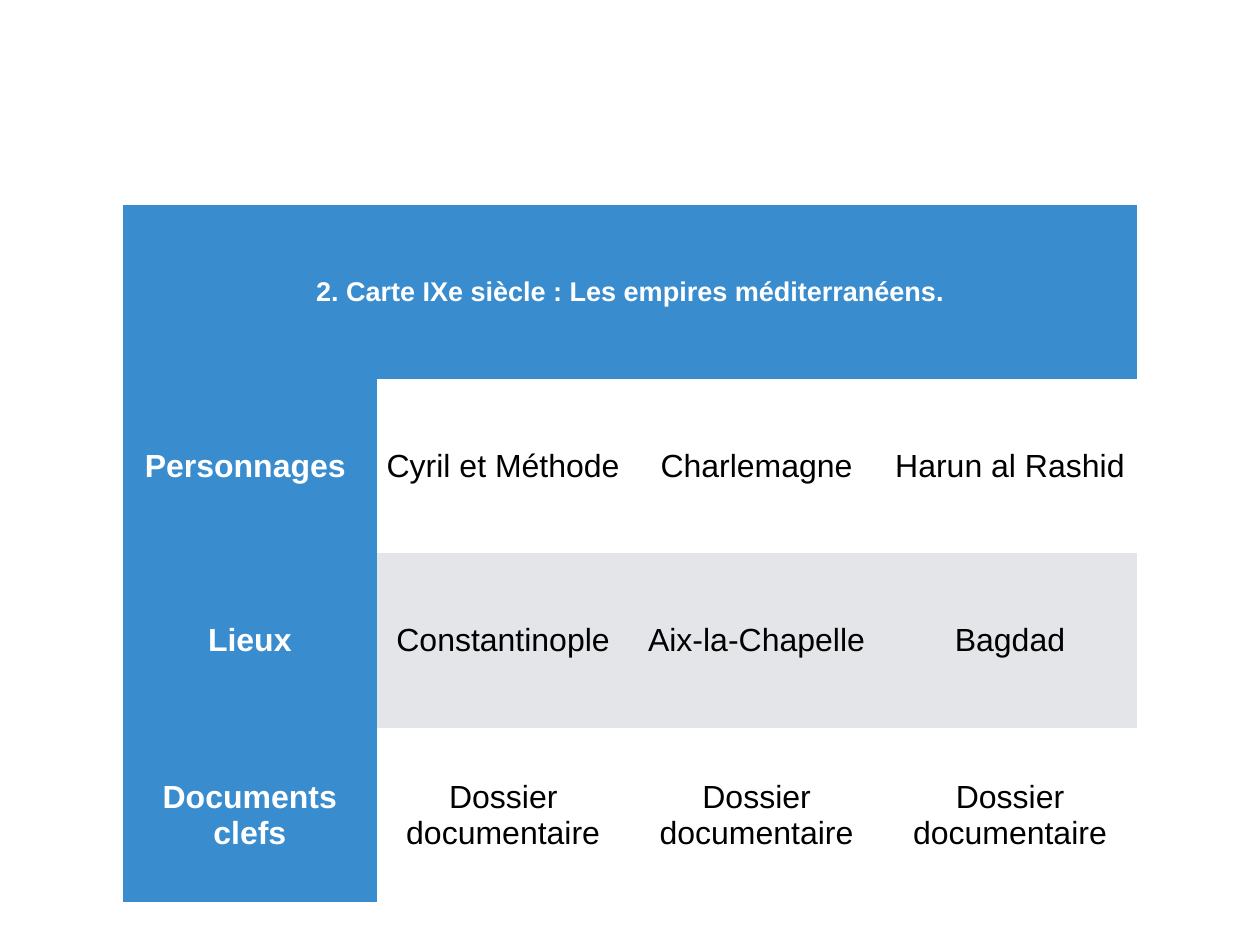
from dataclasses import dataclass

from pptx import Presentation
from pptx.dml.color import RGBColor
from pptx.enum.text import MSO_ANCHOR as Anchor, PP_ALIGN as Align
from pptx.oxml.ns import qn
from pptx.table import Table, _Cell as Cell
from pptx.util import Inches, Pt

BLUE = RGBColor(0x39, 0x8C, 0xCE)
GREY = RGBColor(0xE3, 0xE5, 0xE8)
WHITE = RGBColor(0xFF, 0xFF, 0xFF)
BLACK = RGBColor(0x00, 0x00, 0x00)

SLIDE_WIDTH, SLIDE_HEIGHT = Inches(14.22), Inches(10.67)
COLUMN, ROW = Inches(2.86), Inches(1.97)
CELL_MARGIN = Inches(0.06)
NO_STYLE_NO_GRID = "{2D5ABB26-0587-4C30-8999-92F81FD0307C}"

HEADING = "2. Carte IXe siècle : Les empires méditerranéens."


@dataclass(frozen=True)
class Look:
    fill: RGBColor
    color: RGBColor
    bold: bool
    size: int = 26


@dataclass(frozen=True)
class Topic:
    label: str
    entries: tuple[str, ...]
    band: RGBColor = WHITE


TOPICS = (
    Topic("Personnages ", ("Cyril et Méthode", "Charlemagne", "Harun al Rashid")),
    Topic("Lieux", ("Constantinople", "Aix-la-Chapelle", "Bagdad"), GREY),
    Topic("Documents clefs", ("Dossier documentaire",) * 3),
)
HEADING_LOOK = Look(BLUE, WHITE, True, 22)
LABEL_LOOK = Look(BLUE, WHITE, True)

CELL_FORMAT = {
    "vertical_anchor": Anchor.MIDDLE,
    "margin_left": CELL_MARGIN,
    "margin_right": CELL_MARGIN,
    "margin_top": CELL_MARGIN,
    "margin_bottom": CELL_MARGIN,
}
PLAIN_TABLE = {"first_row": False, "horz_banding": False}


def apply_format(target: object, values: dict) -> None:
    for name, value in values.items():
        setattr(target, name, value)


def write_cell(cell: Cell, wording: str, look: Look) -> None:
    apply_format(cell, CELL_FORMAT)
    cell.fill.solid()
    cell.fill.fore_color.rgb = look.fill
    paragraph = cell.text_frame.paragraphs[0]
    paragraph.alignment = Align.CENTER
    run = paragraph.add_run()
    run.text = wording
    apply_format(run.font, {"name": "Arial", "size": Pt(look.size), "bold": look.bold})
    run.font.color.rgb = look.color


def fill_topic(empires: Table, row: int, topic: Topic) -> None:
    write_cell(empires.cell(row, 0), topic.label, LABEL_LOOK)
    entry_look = Look(topic.band, BLACK, False)
    for column, entry in enumerate(topic.entries, start=1):
        write_cell(empires.cell(row, column), entry, entry_look)


def main() -> None:
    deck = Presentation()
    apply_format(deck, {"slide_width": SLIDE_WIDTH, "slide_height": SLIDE_HEIGHT})
    slide = deck.slides.add_slide(deck.slide_layouts[6])

    # Table of the empires, centred across the slide
    rows, columns = len(TOPICS) + 1, len(TOPICS[0].entries) + 1
    width, height = columns * COLUMN, rows * ROW
    empires = slide.shapes.add_table(
        rows, columns, (SLIDE_WIDTH - width) // 2, Inches(2.31), width, height
    ).table
    apply_format(empires, PLAIN_TABLE)
    empires._tbl.tblPr.find(qn("a:tableStyleId")).text = NO_STYLE_NO_GRID

    # Heading across all columns
    heading = empires.cell(0, 0)
    heading.merge(empires.cell(0, columns - 1))
    write_cell(heading, HEADING, HEADING_LOOK)

    # One row per topic
    for row, topic in enumerate(TOPICS, start=1):
        fill_topic(empires, row, topic)

    deck.save("out.pptx")


if __name__ == "__main__":
    main()
